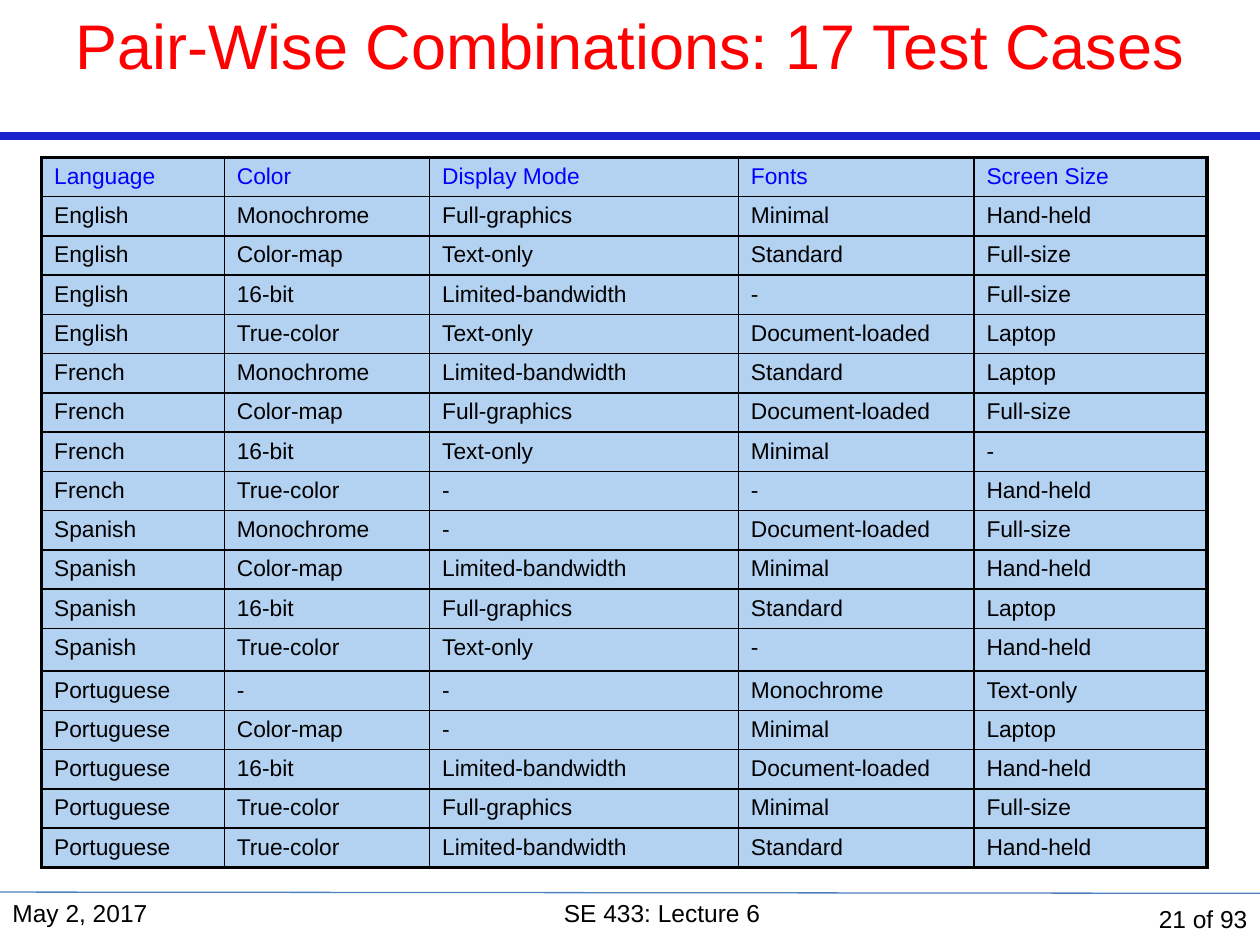
import pptx
import pptx.util
import pptx.dml.color
import pptx.enum.shapes
import pptx.enum.text
import pptx.oxml.ns
from lxml import etree

Inches, Pt = pptx.util.Inches, pptx.util.Pt
RGBColor = pptx.dml.color.RGBColor
ALIGN = pptx.enum.text.PP_ALIGN
ANCHOR = pptx.enum.text.MSO_ANCHOR
qn = pptx.oxml.ns.qn

# Content
TITLE = "Pair-Wise Combinations: 17 Test Cases"
TEST_CASES = [
    ("Language", "Color", "Display Mode", "Fonts", "Screen Size"),
    ("English", "Monochrome", "Full-graphics", "Minimal", "Hand-held"),
    ("English", "Color-map", "Text-only", "Standard", "Full-size"),
    ("English", "16-bit", "Limited-bandwidth", "-", "Full-size"),
    ("English", "True-color", "Text-only", "Document-loaded", "Laptop"),
    ("French", "Monochrome", "Limited-bandwidth", "Standard", "Laptop"),
    ("French", "Color-map", "Full-graphics", "Document-loaded", "Full-size"),
    ("French", "16-bit", "Text-only", "Minimal", "-"),
    ("French", "True-color", "-", "-", "Hand-held"),
    ("Spanish", "Monochrome", "-", "Document-loaded", "Full-size"),
    ("Spanish", "Color-map", "Limited-bandwidth", "Minimal", "Hand-held"),
    ("Spanish", "16-bit", "Full-graphics", "Standard", "Laptop"),
    ("Spanish", "True-color", "Text-only", "-", "Hand-held"),
    ("Portuguese", "-", "-", "Monochrome", "Text-only"),
    ("Portuguese", "Color-map", "-", "Minimal", "Laptop"),
    ("Portuguese", "16-bit", "Limited-bandwidth", "Document-loaded", "Hand-held"),
    ("Portuguese", "True-color", "Full-graphics", "Minimal", "Full-size"),
    ("Portuguese", "True-color", "Limited-bandwidth", "Standard", "Hand-held"),
]
# Footer: text, left, width, alignment, anchor
FOOTER = [
    ("May 2, 2017", 0, 2.17, ALIGN.LEFT, ANCHOR.TOP),
    ("SE 433: Lecture 6", 2.17, 6.17, ALIGN.CENTER, ANCHOR.TOP),
    ("21 of 93", 8.33, 1.67, ALIGN.RIGHT, ANCHOR.MIDDLE),
]

# Style
FONT = "Arial"
RED = RGBColor(0xFF, 0x00, 0x00)
BLUE = RGBColor(0x00, 0x00, 0xFF)
BLACK = RGBColor(0x00, 0x00, 0x00)
CELL_BLUE = RGBColor(0xB3, 0xD1, 0xF0)
TITLE_RULE = RGBColor(0x18, 0x22, 0xCD)
FOOTER_RULE = RGBColor(0x4F, 0x81, 0xBD)
INNER_BORDER, OUTER_BORDER = 1, 2.25

# Layout
PAGE_WIDTH, PAGE_HEIGHT = 10, 7.5
TITLE_HEIGHT, FOOTER_TOP = 1.08, 7.08
TABLE_LEFT, TABLE_TOP = 0.33, 1.25
COLUMN_WIDTHS = [1.45, 1.63, 2.45, 1.87, 1.85]
TALL_ROW, TALL_HEIGHT = 12, 0.34
ROW_HEIGHT = 5.3 / (len(TEST_CASES) - 1)


def write(frame, text, size, color, align=ALIGN.LEFT):
    frame.text = text
    para = frame.paragraphs[0]
    para.alignment = align
    font = para.runs[0].font
    font.name, font.size, font.color.rgb = FONT, Pt(size), color


def add_rule(page, y_start, y_end, color, weight):
    rule = page.shapes.add_connector(
        pptx.enum.shapes.MSO_CONNECTOR.STRAIGHT,
        0, Inches(y_start), Inches(PAGE_WIDTH), Inches(y_end))
    rule.line.color.rgb, rule.line.width = color, Pt(weight)
    etree.SubElement(rule.element.spPr, qn("a:effectLst"))


def set_border(cell, side, weight):
    border = etree.SubElement(cell._tc.get_or_add_tcPr(), qn("a:ln" + side), w=str(Pt(weight)))
    fill = etree.SubElement(border, qn("a:solidFill"))
    etree.SubElement(fill, qn("a:srgbClr"), val=str(BLACK))


def add_test_table(page):
    rows, columns = len(TEST_CASES), len(COLUMN_WIDTHS)
    heights = [TALL_HEIGHT if r == TALL_ROW else ROW_HEIGHT for r in range(rows)]
    table = page.shapes.add_table(
        rows, columns, Inches(TABLE_LEFT), Inches(TABLE_TOP),
        Inches(sum(COLUMN_WIDTHS)), Inches(sum(heights))).table
    for column, width in zip(table.columns, COLUMN_WIDTHS):
        column.width = Inches(width)
    for r, values in enumerate(TEST_CASES):
        table.rows[r].height = Inches(heights[r])
        for c, value in enumerate(values):
            cell = table.cell(r, c)
            write(cell.text_frame, value, 13, BLACK if r else BLUE)
            on_edge = {"L": c == 0, "R": c == columns - 1, "T": r == 0, "B": r == rows - 1}
            for side, outer in on_edge.items():
                set_border(cell, side, OUTER_BORDER if outer else INNER_BORDER)
            cell.fill.solid()
            cell.fill.fore_color.rgb = CELL_BLUE


def main():
    deck = pptx.Presentation()
    deck.slide_width, deck.slide_height = Inches(PAGE_WIDTH), Inches(PAGE_HEIGHT)
    page = deck.slides.add_slide(deck.slide_layouts[5])

    # Rules under the title and above the footer
    add_rule(page, TITLE_HEIGHT, TITLE_HEIGHT, TITLE_RULE, 4.5)
    add_rule(page, FOOTER_TOP, FOOTER_TOP + 0.01, FOOTER_RULE, 0.75)

    # Title
    title = page.shapes.title
    title.left, title.top = 0, 0
    title.width, title.height = Inches(PAGE_WIDTH), Inches(TITLE_HEIGHT)
    title.text_frame.vertical_anchor = ANCHOR.TOP
    write(title.text_frame, TITLE, 36, RED, ALIGN.CENTER)

    # Test case table
    add_test_table(page)

    # Footer
    for text, left, width, align, anchor in FOOTER:
        box = page.shapes.add_textbox(Inches(left), Inches(FOOTER_TOP), Inches(width),
                                      Inches(PAGE_HEIGHT - FOOTER_TOP))
        box.text_frame.word_wrap = True
        box.text_frame.vertical_anchor = anchor
        write(box.text_frame, text, 14, BLACK, align)

    deck.save("out.pptx")


if __name__ == "__main__":
    main()
